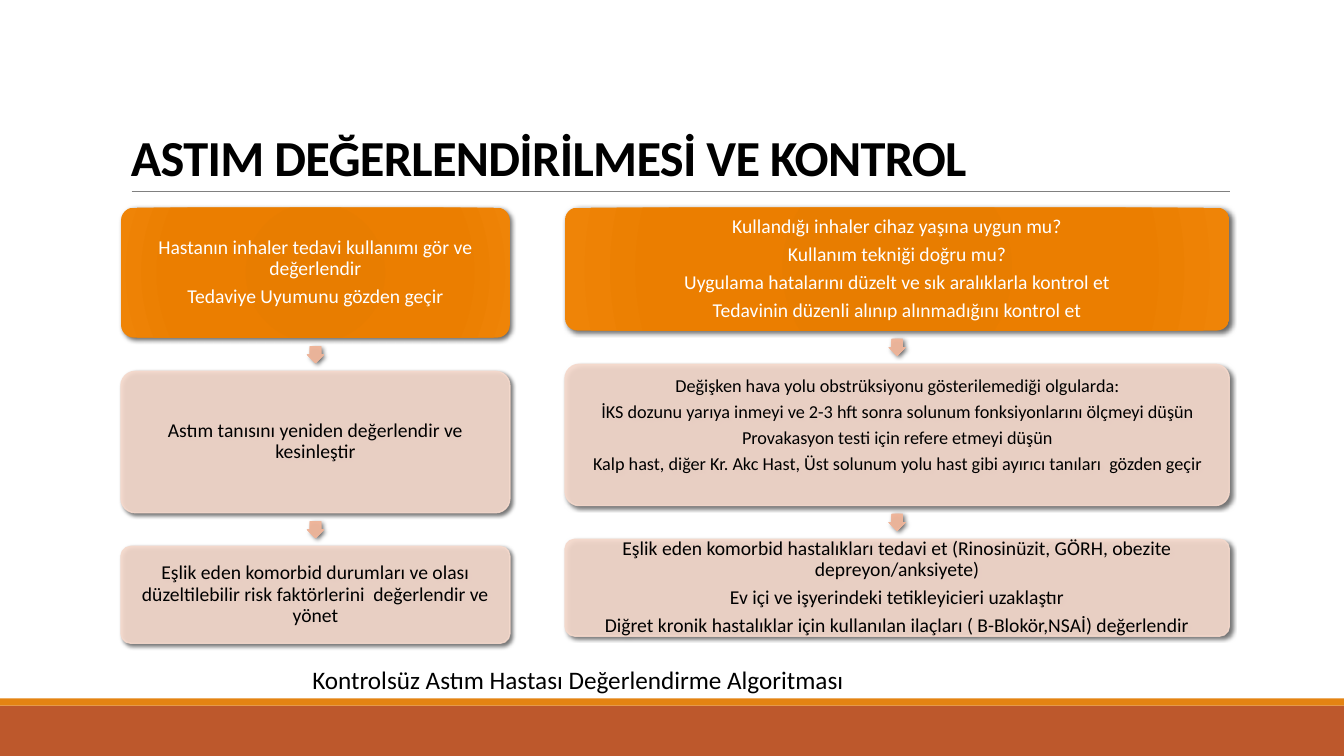
from pptx import Presentation
from pptx.dml.color import RGBColor
from pptx.enum.shapes import MSO_CONNECTOR, MSO_SHAPE
from pptx.enum.text import MSO_ANCHOR, PP_ALIGN
from pptx.oxml import parse_xml
from pptx.oxml.ns import nsdecls, qn
from pptx.oxml.xmlchemy import OxmlElement
from pptx.util import Cm, Pt

COLORS = {
    "white": "FFFFFF", "black": "000000", "rule": "808080",
    "footer": "BD582C", "stripe": "E48312", "pale": "F5D9CC",
}
ORANGE_STOPS = {0: "E57B00", 34: "E87D00", 70: "EB7E00", 100: "EF8407"}
ARROW_STOPS = {0: "E8B196", 34: "E9B399", 70: "EEB59A", 100: "F3C0A8"}
FONT = "Calibri"
CARD_GAP = 0.85
ARROW_SIZE = 0.43

# Each card: height in cm, text size, space kept free at the bottom, lines
LEFT_CARDS = [
    (3.28, 14, 0, ["Hastanın inhaler tedavi kullanımı gör ve değerlendir",
                   "Tedaviye Uyumunu gözden geçir"]),
    (3.56, 14, 0, ["Astım tanısını yeniden değerlendir ve kesinleştir"]),
    (2.44, 14, 0, ["Eşlik eden komorbid durumları ve olası düzeltilebilir risk "
                   "faktörlerini  değerlendir ve yönet"]),
]
RIGHT_CARDS = [
    (3.1, 14, 0, ["Kullandığı inhaler cihaz yaşına uygun mu?",
                  "Kullanım tekniği doğru mu?",
                  "Uygulama hatalarını düzelt ve sık aralıklarla kontrol et",
                  "Tedavinin düzenli alınıp alınmadığını kontrol et"]),
    (3.56, 13, 0.46, [
        "Değişken hava yolu obstrüksiyonu gösterilemediği olgularda:",
        "İKS dozunu yarıya inmeyi ve 2-3 hft sonra solunum fonksiyonlarını ölçmeyi düşün",
        "Provakasyon testi için refere etmeyi düşün",
        "Kalp hast, diğer Kr. Akc Hast, Üst solunum yolu hast gibi ayırıcı tanıları  "
        "gözden geçir"]),
    (2.44, 14, 0, [
        "Eşlik eden komorbid hastalıkları tedavi et (Rinosinüzit, GÖRH, obezite "
        "depreyon/anksiyete)",
        "Ev içi ve işyerindeki tetikleyicieri uzaklaştır",
        "Diğret kronik hastalıklar için kullanılan ilaçları ( B-Blokör,NSAİ) değerlendir"]),
]


def color(name):
    return RGBColor.from_string(COLORS[name])


def set_font(para, size, name, bold=False):
    para.font.name = FONT
    para.font.size = Pt(size)
    para.font.bold = bold
    para.font.color.rgb = color(name)


def add_block(page, kind, left, top, width, height):
    block = page.shapes.add_shape(kind, Cm(left), Cm(top), Cm(width), Cm(height))
    block.shadow.inherit = False
    block.line.fill.background()
    return block


def fill_gradient(block, stops):
    marks = "".join(f'<a:gs pos="{position * 1000}"><a:srgbClr val="{value}"/></a:gs>'
                    for position, value in stops.items())
    gradient = parse_xml(
        f'<a:gradFill {nsdecls("a")} rotWithShape="1"><a:gsLst>{marks}</a:gsLst>'
        '<a:path path="circle"><a:fillToRect l="100000" t="100000" r="100000" '
        'b="100000"/></a:path></a:gradFill>')
    block._element.spPr.find(qn("a:prstGeom")).addnext(gradient)


def fill_pale(block):
    block.fill.solid()
    block.line.fill.solid()
    block.line.width = Pt(1)
    for paint in (block.fill, block.line.fill):
        paint.fore_color.rgb = color("pale")
    for value in block._element.spPr.iter(qn("a:srgbClr")):
        alpha = OxmlElement("a:alpha")
        alpha.set("val", "90000")
        value.append(alpha)


def add_shadow(block, blur):
    shadow = parse_xml(
        f'<a:outerShdw {nsdecls("a")} blurRad="{Pt(blur)}" dist="{Pt(2)}" dir="2700000" '
        f'algn="br" rotWithShape="0"><a:srgbClr val="{COLORS["black"]}">'
        '<a:alpha val="60000"/></a:srgbClr></a:outerShdw>')
    block._element.spPr.find(qn("a:effectLst")).append(shadow)


def add_card(page, left, top, width, card, is_first):
    height, size, bottom_space, lines = card
    box = add_block(page, MSO_SHAPE.ROUNDED_RECTANGLE, left, top, width, height)
    box.adjustments[0] = 0.1
    if is_first:
        fill_gradient(box, ORANGE_STOPS)
    else:
        fill_pale(box)
    add_shadow(box, 3.5 if is_first else 3)

    frame = box.text_frame
    frame.word_wrap = True
    frame.vertical_anchor = MSO_ANCHOR.MIDDLE
    frame.margin_left = frame.margin_right = Cm(0.12)
    frame.margin_top = Cm(0.05)
    frame.margin_bottom = Cm(0.05 + bottom_space)
    frame.text = "\n".join(lines)
    for para in frame.paragraphs:
        para.alignment = PP_ALIGN.CENTER
        para.line_spacing = 0.9
        para.space_after = Pt(0.35 * size)
        set_font(para, size, "white" if is_first else "black")


def add_arrow(page, left, top):
    arrow = add_block(page, MSO_SHAPE.RIGHT_ARROW, left, top, ARROW_SIZE, ARROW_SIZE)
    arrow.rotation = 90
    arrow.adjustments[0] = 0.667
    arrow.adjustments[1] = 0.5
    fill_gradient(arrow, ARROW_STOPS)
    add_shadow(arrow, 3.5)


def add_column(page, left, top, width, cards):
    for index, card in enumerate(cards):
        if index:
            add_arrow(page, left + (width - ARROW_SIZE) / 2,
                      top - (CARD_GAP + ARROW_SIZE) / 2)
        add_card(page, left, top, width, card, index == 0)
        top += card[0] + CARD_GAP


def add_footer(page, left, top, width, height):
    stripe_height = 0.18
    for name, band_top, band_height in (
            ("footer", top + stripe_height, height - stripe_height),
            ("stripe", top, stripe_height)):
        band = add_block(page, MSO_SHAPE.RECTANGLE, left, band_top, width, band_height)
        band.fill.solid()
        band.fill.fore_color.rgb = color(name)


def add_title(page, left, top, width, height):
    bottom = Cm(top + height)
    rule = page.shapes.add_connector(MSO_CONNECTOR.STRAIGHT, Cm(left + 0.27), bottom,
                                     Cm(left + width), bottom)
    rule.line.color.rgb = color("rule")
    rule.line.width = Pt(0.5)
    rule._element.spPr.append(OxmlElement("a:effectLst"))

    box = page.shapes.add_textbox(Cm(left), Cm(top), Cm(width), Cm(height))
    box.text_frame.word_wrap = True
    box.text_frame.vertical_anchor = MSO_ANCHOR.BOTTOM
    para = box.text_frame.paragraphs[0]
    para.line_spacing = 0.85
    set_font(para, 36, "black", bold=True)
    span = para.add_run()
    span.text = "ASTIM DEĞERLENDİRİLMESİ VE KONTROL"
    span.font._element.set("spc", "-50")


def add_caption(page, left, top, width, height):
    box = page.shapes.add_textbox(Cm(left), Cm(top), Cm(width), Cm(height))
    box.text_frame.word_wrap = True
    para = box.text_frame.paragraphs[0]
    para.text = "Kontrolsüz Astım Hastası Değerlendirme Algoritması"
    set_font(para, 18, "black")


def main():
    deck = Presentation()
    deck.slide_width, deck.slide_height = Cm(33.87), Cm(19.05)
    page = deck.slides.add_slide(deck.slide_layouts[6])
    add_footer(page, 0, 17.6, 33.87, 1.45)
    add_title(page, 3.05, 0.79, 27.94, 4.04)
    add_column(page, 3.05, 5.23, 9.8, LEFT_CARDS)
    add_column(page, 14.24, 5.23, 16.74, RIGHT_CARDS)
    add_caption(page, 7.62, 16.61, 14.12, 1.03)
    deck.save("out.pptx")


if __name__ == "__main__":
    main()
